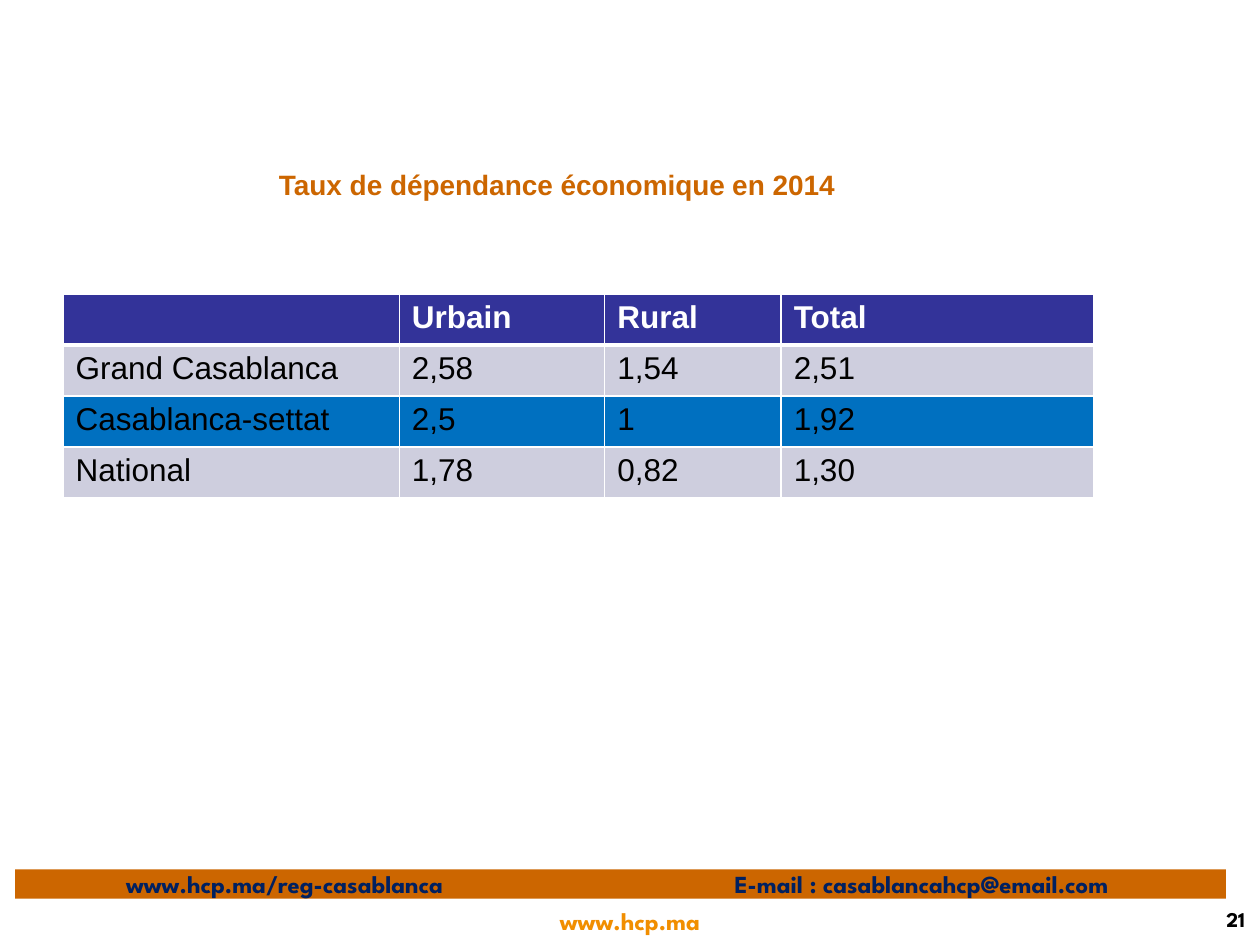
from pptx import Presentation
from pptx.dml.color import RGBColor
from pptx.enum.shapes import MSO_SHAPE
from pptx.enum.text import MSO_ANCHOR as Anchor, PP_ALIGN as Align
from pptx.oxml import parse_xml
from pptx.oxml.ns import nsdecls
from pptx.util import Inches, Pt

COLORS = {
    "white": "FFFFFF", "black": "000000", "orange": "CC6600", "amber": "F18E00",
    "grey": "808080", "indigo": "333399", "lavender": "CECEDE", "blue": "0070C0",
    "navy": "002060",
}
WIDTH, HEIGHT = 10, 7.5


class SlideBuilder:
    """Draws styled elements on one slide, placed in percent of its size."""

    body_font, footer_font = "Arial", "League Spartan"

    def __init__(self, deck):
        self.slide = deck.slides.add_slide(deck.slide_layouts[5])

    def area(self, left, top, width, height):
        return [Inches(share * side / 100) for share, side in
                zip((left, top, width, height), (WIDTH, HEIGHT) * 2)]

    def color(self, name):
        return RGBColor.from_string(COLORS[name])

    def add_text(self, paragraph, text, size, color, font, bold=True):
        run = paragraph.add_run()
        run.text = text
        run.font.size, run.font.bold, run.font.name = Pt(size), bold, font
        run.font.color.rgb = self.color(color)

    def title(self, area, pieces):
        heading = self.slide.shapes.title
        heading.left, heading.top, heading.width, heading.height = self.area(*area)
        heading.text_frame.vertical_anchor = Anchor.MIDDLE
        paragraph = heading.text_frame.paragraphs[0]
        paragraph.alignment = Align.CENTER
        for text, size, color in pieces:
            self.add_text(paragraph, text, size, color, self.body_font)

    def label(self, area, text, size, color, align):
        frame = self.slide.shapes.add_textbox(*self.area(*area)).text_frame
        frame.word_wrap = True
        frame.vertical_anchor = Anchor.MIDDLE
        frame.paragraphs[0].alignment = align
        self.add_text(frame.paragraphs[0], text, size, color, self.footer_font)

    def banner(self, area, text, indent, tab):
        bar = self.slide.shapes.add_shape(MSO_SHAPE.RECTANGLE, *self.area(*area))
        bar.shadow.inherit = False
        bar.fill.solid()
        bar.fill.fore_color.rgb = self.color("orange")
        bar.line.fill.background()
        frame = bar.text_frame
        frame.vertical_anchor = Anchor.MIDDLE
        frame.margin_left = Inches(indent * WIDTH / 100)
        frame.margin_right = frame.margin_bottom = 0
        frame.margin_top = Inches(0.04)
        paragraph = frame.paragraphs[0]
        paragraph.alignment = Align.LEFT
        position = Inches(tab * WIDTH / 100)
        paragraph._p.get_or_add_pPr().append(parse_xml(
            f'<a:tabLst {nsdecls("a")}><a:tab pos="{position}" algn="l"/></a:tabLst>'))
        paragraph.line_spacing = 0.8
        self.add_text(paragraph, text, 14, "navy", self.footer_font)

    def border(self, cell, side, points):
        cell._tc.get_or_add_tcPr().append(parse_xml(
            f'<a:ln{side} {nsdecls("a")} w="{Pt(points)}"><a:solidFill>'
            f'<a:srgbClr val="{COLORS["white"]}"/></a:solidFill></a:ln{side}>'))

    def table(self, area, shares, rows, fills):
        grid = self.slide.shapes.add_table(
            len(rows), len(shares), *self.area(*area)).table
        for column, share in zip(grid.columns, shares):
            column.width = Inches(share * WIDTH / 100)
        for r, (values, fill) in enumerate(zip(rows, fills)):
            header = r == 0
            for c, value in enumerate(values):
                cell = grid.cell(r, c)
                for side in "LRTB":
                    thick = (side == "B" and header) or (side == "T" and r == 1)
                    self.border(cell, side, 3 if thick else 1)
                cell.fill.solid()
                cell.fill.fore_color.rgb = self.color(fill)
                if value:
                    self.add_text(cell.text_frame.paragraphs[0], value, 18,
                                  "white" if header else "black", self.body_font, header)


def main():
    deck = Presentation()
    deck.slide_width, deck.slide_height = Inches(WIDTH), Inches(HEIGHT)
    page = SlideBuilder(deck)
    page.label((38.2, 95.2, 23.6, 4.4), "www.hcp.ma", 14, "amber", Align.CENTER)
    page.title((2.3, 11.2, 84.4, 16.67), [
        ("Taux de dépendance économique", 16, "orange"),
        (" ", 14, "grey"),
        ("en 2014 ", 16, "orange"),
    ])
    page.table((5, 31.1, 81.7, 21.6), (26.7, 16.3, 14, 24.8), [
        ("", "Urbain", "Rural", "Total"),
        ("Grand Casablanca", "2,58", "1,54", "2,51"),
        ("Casablanca-settat", "2,5", "1", "1,92"),
        ("National", "1,78", "0,82", "1,30"),
    ], ("indigo", "lavender", "blue", "lavender"))
    page.label((84.6, 94.9, 15.2, 4.7), "21", 12, "black", Align.RIGHT)
    page.banner((1.2, 92, 96.1, 3.1),
                "www.hcp.ma/reg-casablanca\tE-mail : casablancahcp@email.com", 8.8, 48.3)
    deck.save("out.pptx")


if __name__ == "__main__":
    main()
